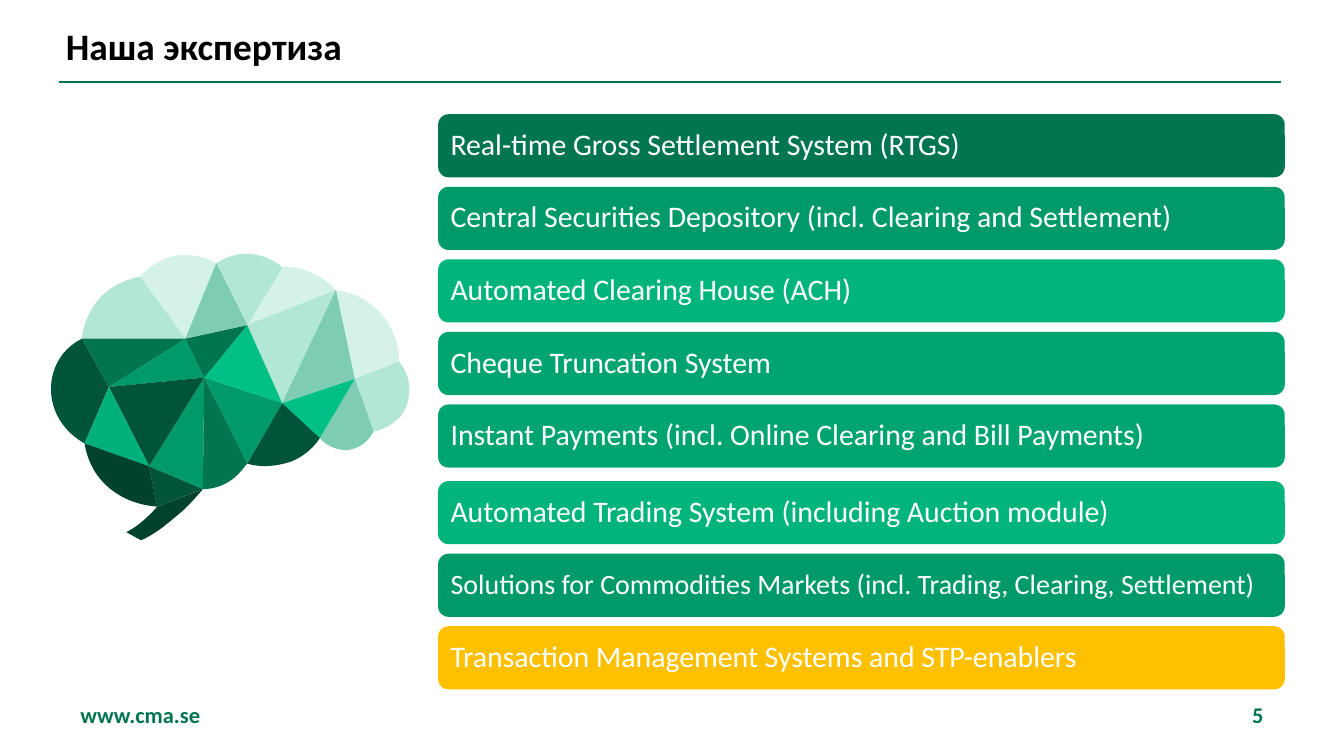
import itertools
import lxml.etree
import pptx
import pptx.dml.color
import pptx.enum.shapes
import pptx.enum.text
import pptx.oxml.ns
import pptx.util

WIDTH = 10
HEIGHT = WIDTH * 9 / 16
FONT, GREEN, WHITE = "Calibri", "007550", "FFFFFF"
LEFT, RIGHT = pptx.enum.text.PP_ALIGN.LEFT, pptx.enum.text.PP_ALIGN.RIGHT

LABELS = [
    ("Наша экспертиза", (0.49, 0.14, 6.67, 0.4), 0, 20, "000000", LEFT),
    ("www.cma.se", (0.5, 5.17, 2.33, 0.3), 0.1, 12, GREEN, LEFT),
    ("5", (7.17, 5.17, 2.33, 0.3), 0.1, 12, GREEN, RIGHT),
]

SYSTEM_BLOCKS = [
    (0.85, [
        ("Real-time Gross Settlement System (RTGS)", "007550", 16),
        ("Central Securities Depository (incl. Clearing and Settlement)", "009A6A", 16),
        ("Automated Clearing House (ACH)", "00B47C", 16),
        ("Сheque Truncation System", "00A471", 16),
        ("Instant Payments (incl. Online Clearing and Bill Payments)", "00A471", 16),
    ]),
    (3.58, [
        ("Automated Trading System (including Auction module)", "00B47C", 16),
        ("Solutions for Commodities Markets (incl. Trading, Clearing, Settlement)", "009A6A", 15),
        ("Transaction Management Systems and STP-enablers", "FFC000", 16),
    ]),
]
BAR_LEFT, BAR_WIDTH, BAR_HEIGHT, BAR_PITCH = 3.26, 6.3, 0.47, 0.54

NODES = {
    "A": (0.61, 2.52), "B": (1.38, 2.52), "C": (0.81, 2.88), "D": (1.52, 2.81),
    "E": (1.11, 3.47), "F": (0.63, 3.3), "G": (1.17, 3.77), "H": (1.51, 3.64),
    "I": (1.84, 3.45), "J": (2.1, 3), "K": (1.84, 2.42), "L": (2.5, 2.16),
    "M": (2.64, 2.82), "N": (2.38, 3.26), "O": (1.61, 1.96), "P": (1.04, 2.06),
    "Q": (2.1, 1.99), "R": (2.97, 2.69), "S": (2.78, 3.21), "T": (0.94, 3.96),
    "U": (1.05, 4.02),
}

ARCS = {
    "FA": [(0.47, 3.21, 0.37, 3.05, 0.38, 2.87), (0.39, 2.72, 0.47, 2.59, 0.61, 2.52)],
    "AP": [(0.62, 2.41, 0.67, 2.3, 0.75, 2.21), (0.83, 2.13, 0.93, 2.08, 1.04, 2.06)],
    "PO": [(1.11, 1.98, 1.21, 1.92, 1.32, 1.9), (1.42, 1.89, 1.52, 1.91, 1.61, 1.96)],
    "OQ": [(1.68, 1.91, 1.78, 1.88, 1.87, 1.89), (1.95, 1.9, 2.04, 1.93, 2.1, 1.99)],
    "QL": [(2.18, 1.98, 2.25, 2, 2.32, 2.03), (2.39, 2.06, 2.45, 2.1, 2.5, 2.16)],
    "LR": [(2.77, 2.19, 2.97, 2.42, 2.97, 2.69)],
    "RS": [(3.07, 2.81, 3.07, 2.98, 2.98, 3.1), (2.92, 3.16, 2.85, 3.2, 2.78, 3.21)],
    "SN": [(2.74, 3.29, 2.67, 3.34, 2.58, 3.35), (2.51, 3.35, 2.43, 3.32, 2.38, 3.26)],
    "NI": [(2.33, 3.34, 2.24, 3.41, 2.15, 3.44), (2.05, 3.47, 1.94, 3.48, 1.84, 3.45)],
    "IH": [(1.8, 3.5, 1.76, 3.55, 1.71, 3.58), (1.65, 3.62, 1.58, 3.64, 1.51, 3.64)],
    "GF": [(1.03, 3.76, 0.9, 3.71, 0.8, 3.62), (0.71, 3.54, 0.65, 3.43, 0.63, 3.3)],
    "GT": [(1.1, 3.85, 1.02, 3.92, 0.94, 3.96)],
    "UH": [(1.14, 3.98, 1.22, 3.92, 1.3, 3.85), (1.38, 3.79, 1.44, 3.72, 1.51, 3.64)],
}

FACETS = [
    ("009A6A", 100, ["DJI", "DCB", "DEH"]),
    ("009A6A", 50, ["MLJ", "BOK", "MSN"]),
    ("00C085", 100, ["NJM", "JDK"]),
    ("00B07A", 30, ["KJL", "APB", "OQK", "MRS"]),
    ("007550", 100, ["KDB", "CAB", "DIH"]),
    ("00543A", 100, ["DCE", "HEG", "FAC", "JNI"]),
    ("00B07A", 100, ["EFC"]),
    ("00422E", 100, ["EGF", "HGTU"]),
    ("00B47C", 17, ["POB", "QLK", "LRM"]),
]


def inches(values):
    return [pptx.util.Inches(value) for value in values]


def color(code):
    return pptx.dml.color.RGBColor.from_string(code)


def paint(shape, code, opacity=100):
    shape.shadow.inherit = False
    shape.fill.solid()
    shape.fill.fore_color.rgb = color(code)
    shape.line.fill.background()
    if opacity < 100:
        tint = shape.fill._xPr.find(".//" + pptx.oxml.ns.qn("a:srgbClr"))
        lxml.etree.SubElement(tint, pptx.oxml.ns.qn("a:alpha"), val=str(opacity * 1000))


def write(box, text, size, code, inset, align=LEFT, bold=False):
    frame = box.text_frame
    frame.word_wrap = True
    frame.vertical_anchor = pptx.enum.text.MSO_ANCHOR.MIDDLE
    frame.margin_left = frame.margin_right = pptx.util.Inches(inset)
    frame.margin_top = frame.margin_bottom = pptx.util.Inches(min(inset, 0.05))
    para = frame.paragraphs[0]
    para.text = text
    para.alignment = align
    para.font.name, para.font.size, para.font.bold = FONT, pptx.util.Pt(size), bold
    para.font.color.rgb = color(code)
    return para


def curve(start, arc, steps=10):
    for x1, y1, x2, y2, x3, y3 in arc:
        controls = (start, (x1, y1), (x2, y2), (x3, y3))
        for step in range(1, steps + 1):
            t = step / steps
            weights = ((1 - t) ** 3, 3 * t * (1 - t) ** 2, 3 * t * t * (1 - t), t ** 3)
            yield tuple(sum(w * point[axis] for w, point in zip(weights, controls))
                        for axis in (0, 1))
        start = (x3, y3)


def outline(names):
    points = [NODES[names[0]]]
    for start, end in itertools.pairwise(names + names[0]):
        arc = ARCS.get(start + end)
        points += curve(NODES[start], arc) if arc else [NODES[end]]
    return [inches(point) for point in points]


def add_brain(page):
    brain = page.shapes.add_group_shape()
    for code, opacity, facets in FACETS:
        for names in facets:
            first, *rest = outline(names)
            builder = brain.shapes.build_freeform(*first)
            builder.add_line_segments(rest, close=True)
            paint(builder.convert_to_shape(), code, opacity)


def add_bars(page):
    for top, systems in SYSTEM_BLOCKS:
        for row, (text, code, size) in enumerate(systems):
            bar = page.shapes.add_shape(
                pptx.enum.shapes.MSO_SHAPE.ROUNDED_RECTANGLE,
                *inches((BAR_LEFT, top + row * BAR_PITCH, BAR_WIDTH, BAR_HEIGHT)))
            paint(bar, code)
            write(bar, text, size, WHITE, 0.07).line_spacing = 0.9


def add_rule(page):
    rule = page.shapes.add_connector(
        pptx.enum.shapes.MSO_CONNECTOR.STRAIGHT, *inches((9.53, 0.61, 0.44, 0.61)))
    rule.line.color.rgb = color(GREEN)
    rule.line.width = pptx.util.Pt(1.25)
    lxml.etree.SubElement(rule._element.spPr, pptx.oxml.ns.qn("a:effectLst"))


def main():
    deck = pptx.Presentation()
    deck.slide_width, deck.slide_height = inches((WIDTH, HEIGHT))
    page = deck.slides.add_slide(deck.slide_layouts[6])
    add_rule(page)
    for text, place, inset, size, code, align in LABELS:
        box = page.shapes.add_textbox(*inches(place))
        write(box, text, size, code, inset, align, bold=True)
    add_brain(page)
    add_bars(page)
    deck.save("out.pptx")


if __name__ == "__main__":
    main()
